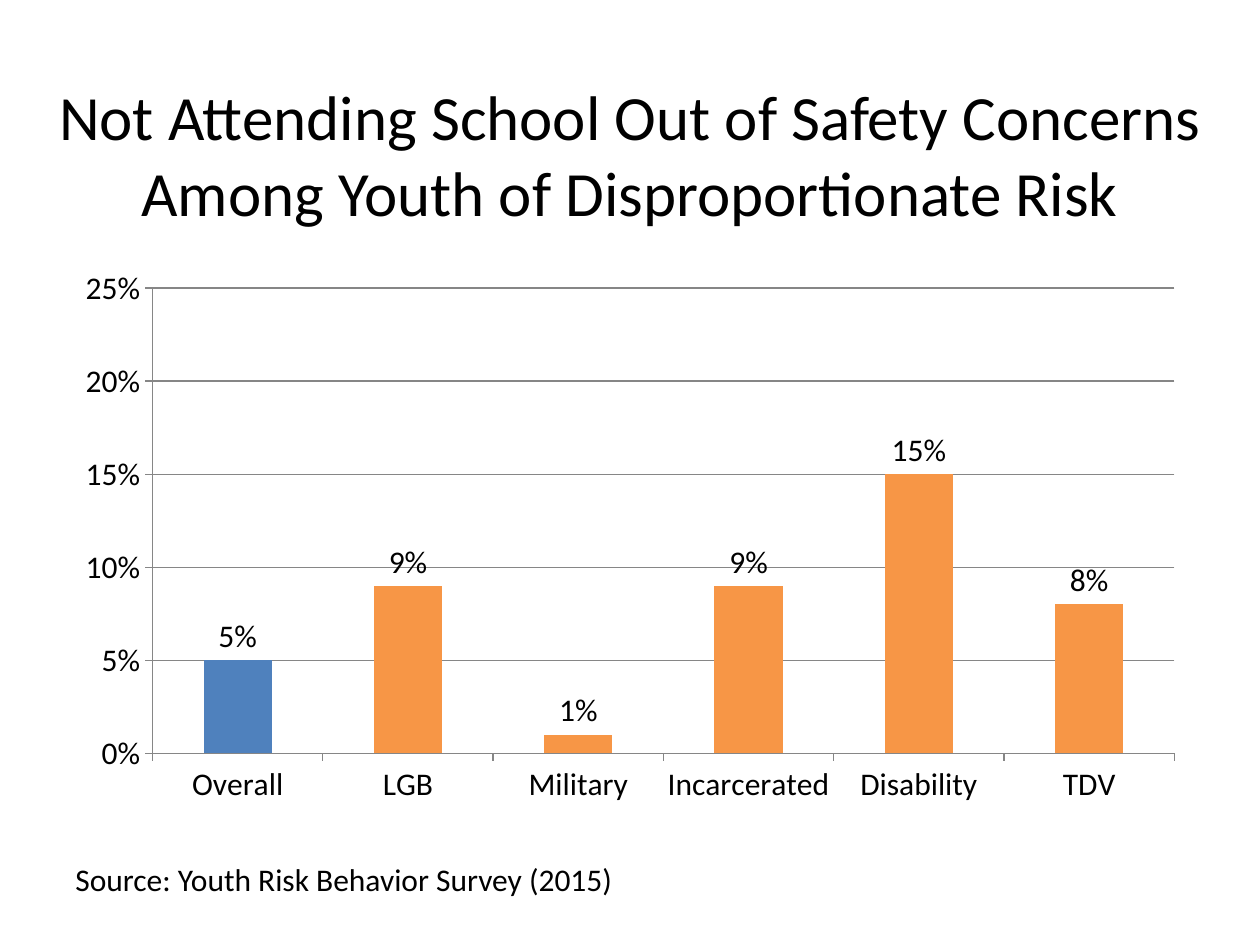
import pptx
import pptx.util
import pptx.chart.data
import pptx.dml.color
import pptx.enum.chart
import pptx.enum.text

Cm, Pt = pptx.util.Cm, pptx.util.Pt
Align = pptx.enum.text.PP_ALIGN
Anchor = pptx.enum.text.MSO_ANCHOR
Chart = pptx.enum.chart

FONT = "Calibri"
COLORS = {"text": "000000", "base": "4F81BD", "risk": "F79646",
          "grid": "868686"}

TITLE = ("Not Attending School Out of Safety Concerns "
         "Among Youth of Disproportionate Risk")
SOURCE = "Source: Youth Risk Behavior Survey (2015)"
RATES = {"Overall": 0.05, "LGB": 0.09, "Military": 0.01,
         "Incarcerated": 0.09, "Disability": 0.15, "TDV": 0.08}


def color(name):
    return pptx.dml.color.RGBColor.from_string(COLORS[name])


def style(font, size):
    font.name, font.size = FONT, Pt(size)
    font.color.rgb = color("text")


def write(slide, text, box, size=18, align=Align.LEFT, anchor=Anchor.TOP):
    frame = slide.shapes.add_textbox(*map(Cm, box)).text_frame
    frame.word_wrap = True
    frame.vertical_anchor = anchor
    par = frame.paragraphs[0]
    par.alignment = align
    run = par.add_run()
    run.text = text
    style(run.font, size)


def paint(fill, name):
    fill.solid()
    fill.fore_color.rgb = color(name)


def rule(line):
    line.width = Pt(0.75)
    line.color.rgb = color("grid")


def plot(slide, box):
    """Add the column chart, with the overall rate set apart by colour."""
    data = pptx.chart.data.CategoryChartData(number_format="0%")
    data.categories = list(RATES)
    data.add_series("Series 1", list(RATES.values()))
    chart = slide.shapes.add_chart(
        Chart.XL_CHART_TYPE.COLUMN_CLUSTERED, *map(Cm, box), data).chart
    chart.has_title = chart.has_legend = False
    style(chart.font, 18)

    bars = chart.plots[0]
    bars.gap_width = 150
    bars.vary_by_categories = False
    series = bars.series[0]
    paint(series.format.fill, "risk")
    paint(series.points[0].format.fill, "base")

    labels = series.data_labels
    labels.show_value = True
    labels.number_format = "0%"
    labels.number_format_is_linked = False
    labels.position = Chart.XL_LABEL_POSITION.OUTSIDE_END
    style(labels.font, 18)

    for axis in (chart.category_axis, chart.value_axis):
        axis.major_tick_mark = Chart.XL_TICK_MARK.OUTSIDE
        axis.minor_tick_mark = Chart.XL_TICK_MARK.NONE
        rule(axis.format.line)
        style(axis.tick_labels.font, 18)

    scale = chart.value_axis
    scale.minimum_scale, scale.maximum_scale = 0, 0.25
    scale.major_unit = 0.05
    scale.tick_labels.number_format = "0%"
    scale.tick_labels.number_format_is_linked = False
    scale.has_major_gridlines = True
    rule(scale.major_gridlines.format.line)


def main():
    deck = pptx.Presentation()
    deck.slide_width, deck.slide_height = Cm(25.4), Cm(19.05)
    slide = deck.slides.add_slide(deck.slide_layouts[6])
    write(slide, TITLE, (0, 1.5, 25.4, 3.18), size=36,
          align=Align.CENTER, anchor=Anchor.MIDDLE)
    write(slide, SOURCE, (1.27, 17.22, 12.7, 1.02))
    plot(slide, (1.27, 5.2, 22.86, 11.23))
    deck.save("out.pptx")


if __name__ == "__main__":
    main()
